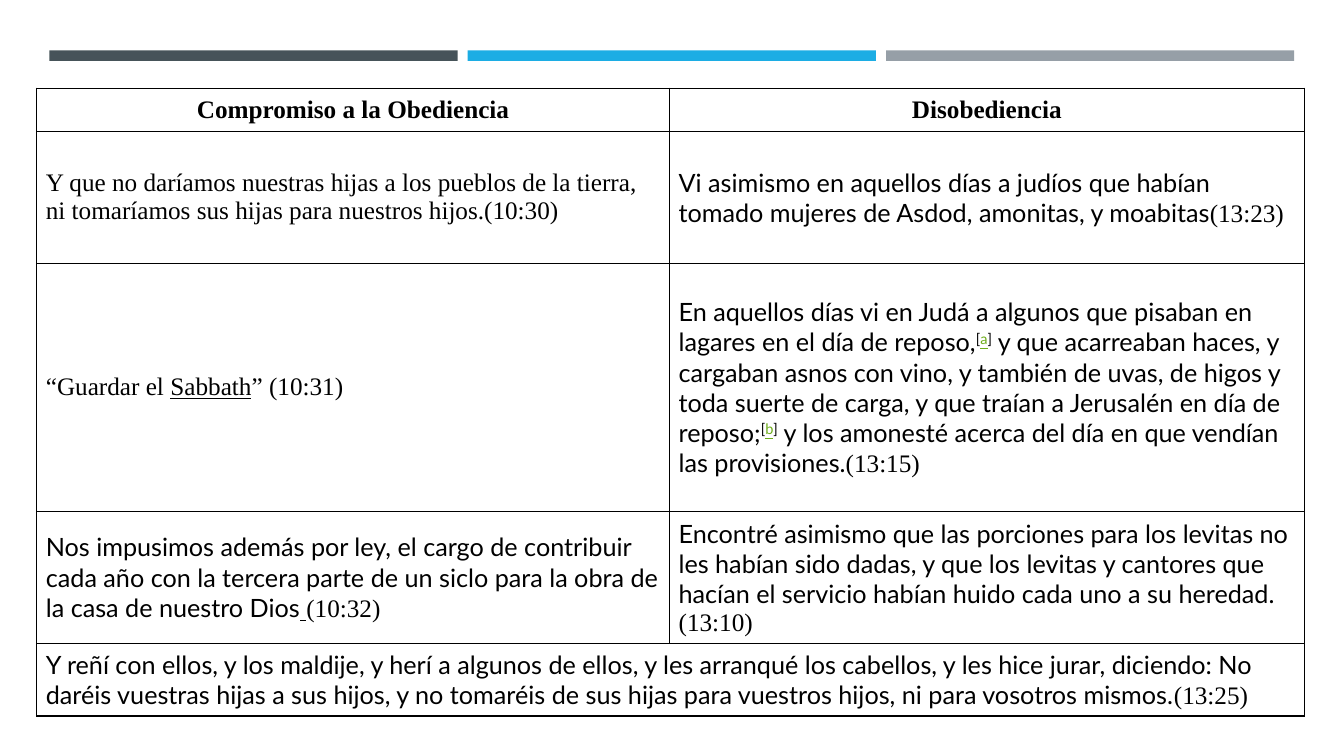
from lxml.etree import SubElement
from pptx import Presentation
from pptx.dml.color import RGBColor
from pptx.enum.shapes import MSO_SHAPE
from pptx.enum.text import MSO_ANCHOR, PP_ALIGN
from pptx.oxml import parse_xml
from pptx.oxml.ns import nsdecls, qn
from pptx.util import Pt

SERIF, SANS = "Times New Roman", "Lato"
BLACK, GREEN = "000000", "6EAC1C"


def rgb(color):
    return RGBColor.from_string(color)


def note(letter):
    """Runs of a raised footnote mark such as [a]."""
    return [("[", "raised"), (letter, "raised link"), ("]", "raised")]


prs = Presentation()
prs.slide_width, prs.slide_height = Pt(960), Pt(540)
s = prs.slides.add_slide(prs.slide_layouts[6])

# Three bars across the top
for i, color in enumerate(["465359", "1CADE4", "969FA7"]):
    bar = s.shapes.add_shape(MSO_SHAPE.RECTANGLE, Pt(35.3 + 298.8 * i), Pt(36),
                             Pt(291.6), Pt(7.5))
    bar.shadow.inherit = False
    bar.fill.solid()
    bar.fill.fore_color.rgb = rgb(color)
    bar.line.fill.background()

# Each cell is a list of (text, style) runs
rows = [
    [[("Compromiso a la Obediencia", "serif bold")],
     [("Disobediencia", "serif bold")]],
    [[("Y que no daríamos nuestras hijas a los pueblos de la tierra, ni tomaríamos "
       "sus hijas para nuestros hijos.(10:30)", "serif")],
     [("Vi asimismo en aquellos días a judíos que habían tomado mujeres de Asdod, "
       "amonitas, y moabitas", ""), ("(13:23)", "serif")]],
    [[("“Guardar el ", "serif"), ("Sabbath", "serif underline"), ("” (10:31)", "serif")],
     [("En aquellos días vi en Judá a algunos que pisaban en lagares en el día de "
       "reposo,", ""), *note("a"),
      (" y que acarreaban haces, y cargaban asnos con vino, y también de uvas, de "
       "higos y toda suerte de carga, y que traían a Jerusalén en día de reposo;", ""),
      *note("b"),
      (" y los amonesté acerca del día en que vendían las provisiones.", ""),
      ("(13:15)", "serif")]],
    [[("Nos impusimos además por ley, el cargo de contribuir cada año con la tercera "
       "parte de un siclo para la obra de la casa de nuestro Dios", ""),
      (" ", "serif underline"), ("(10:32)", "serif")],
     [("Encontré asimismo que las porciones para los levitas no les habían sido dadas, "
       "y que los levitas y cantores que hacían el servicio habían huido cada uno a su "
       "heredad.", ""), ("(13:10)", "serif")]],
    [[("Y reñí con ellos, y los maldije, y herí a algunos de ellos, y les arranqué los "
       "cabellos, y les hice jurar, diciendo: No daréis vuestras hijas a sus hijos, y no "
       "tomaréis de sus hijas para vuestros hijos, ni para vosotros mismos.", ""),
      ("(13:25)", "serif")], []],
]

table = s.shapes.add_table(len(rows), 2, Pt(26.2), Pt(63), Pt(905.5), Pt(448)).table
table.first_row = table.horz_banding = False
for column, width in zip(table.columns, [452, 453.5]):
    column.width = Pt(width)
for row, height in zip(table.rows, [31, 94, 177.5, 94, 52]):
    row.height = Pt(height)
table.cell(4, 0).merge(table.cell(4, 1))

for y, row in enumerate(rows):
    for x, runs in enumerate(row):
        cell = table.cell(y, x)
        cell.vertical_anchor = MSO_ANCHOR.MIDDLE
        cell.margin_left = cell.margin_right = Pt(6.6)
        cell.margin_top = cell.margin_bottom = Pt(3.4)
        for side in "LRTB":
            ln = SubElement(cell._tc.get_or_add_tcPr(), qn(f"a:ln{side}"), w=str(Pt(1)))
            ln.append(parse_xml(f'<a:solidFill {nsdecls("a")}>'
                                f'<a:srgbClr val="{BLACK}"/></a:solidFill>'))
        cell.fill.background()
        p = cell.text_frame.paragraphs[0]
        p.alignment = PP_ALIGN.CENTER if y == 0 else PP_ALIGN.LEFT
        for text, style in runs:
            r = p.add_run()
            r.text = text
            r.font.size = Pt(18)
            r.font.name = SERIF if "serif" in style else SANS
            r.font.bold = "bold" in style
            r.font.underline = "underline" in style or "link" in style
            r.font.color.rgb = rgb(GREEN if "link" in style else BLACK)
            if "raised" in style:
                r.font._element.set("baseline", "30000")

prs.save("out.pptx")
